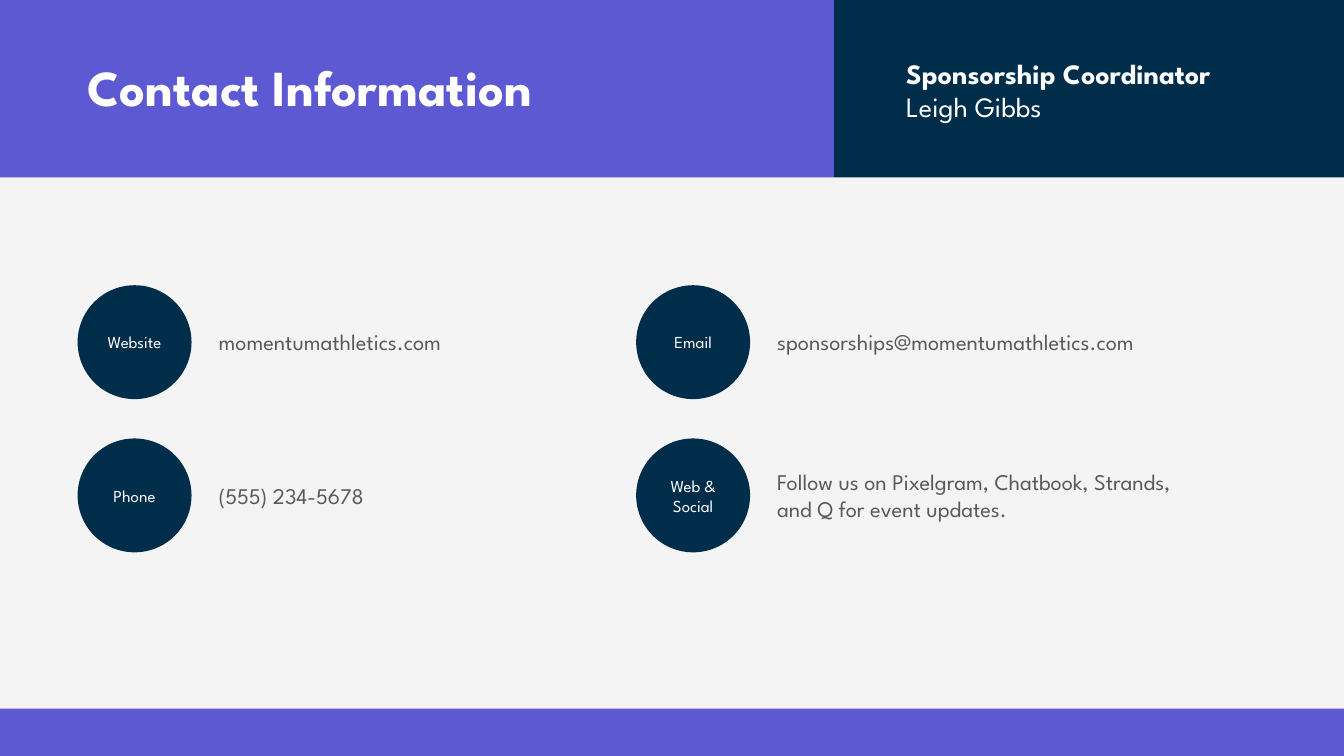
from dataclasses import dataclass

from pptx import Presentation
from pptx.dml.color import RGBColor
from pptx.enum.shapes import MSO_SHAPE
from pptx.enum.text import MSO_ANCHOR, MSO_AUTO_SIZE, PP_ALIGN
from pptx.shapes.autoshape import Shape
from pptx.slide import Slide
from pptx.text.text import TextFrame
from pptx.util import Inches, Pt

NAVY = RGBColor(0x00, 0x2D, 0x4A)
PURPLE = RGBColor(0x5C, 0x59, 0xD3)
LIGHT = RGBColor(0xF4, 0xF4, 0xF4)
GREY = RGBColor(0x59, 0x59, 0x59)
WHITE = RGBColor(0xFF, 0xFF, 0xFF)
FONT = "League Spartan"

# Contact grid
LEFT, TOP = 0.77, 2.83
COL_STEP, ROW_STEP = 5.54, 1.52
CIRCLE = 1.13
DETAIL_OFFSET = 1.3


@dataclass
class Box:
    left: float
    top: float
    width: float
    height: float

    def inches(self) -> tuple[Inches, ...]:
        return tuple(Inches(v) for v in (self.left, self.top, self.width, self.height))


@dataclass
class Contact:
    col: int
    row: int
    label: str
    detail: str
    width: float
    height: float = 0.37


CONTACTS = [
    Contact(0, 0, "Website", "momentumathletics.com", 3.38),
    Contact(1, 0, "Email", "sponsorships@momentumathletics.com", 5.16),
    Contact(0, 1, "Phone", "(555) 234-5678", 2.71),
    Contact(1, 1, "Web & Social",
            "Follow us on Pixelgram, Chatbook, Strands, and Q for event updates.",
            4.35, 0.64),
]


def write(tf: TextFrame, text: str, size: int, color: RGBColor, bold: bool = False) -> None:
    """Fill a frame with text; only the first paragraph can be bold."""
    tf.text = text
    tf.word_wrap = True
    for i, p in enumerate(tf.paragraphs):
        for r in p.runs:
            r.font.name = FONT
            r.font.size = Pt(size)
            r.font.bold = bold and i == 0
            r.font.color.rgb = color


def add_filled(s: Slide, kind: MSO_SHAPE, box: Box, color: RGBColor) -> Shape:
    sp = s.shapes.add_shape(kind, *box.inches())
    sp.shadow.inherit = False
    sp.fill.solid()
    sp.fill.fore_color.rgb = color
    sp.line.fill.background()
    return sp


def add_text(s: Slide, box: Box, text: str, size: int, color: RGBColor,
             bold: bool = False) -> None:
    tf = s.shapes.add_textbox(*box.inches()).text_frame
    write(tf, text, size, color, bold)
    tf.auto_size = MSO_AUTO_SIZE.SHAPE_TO_FIT_TEXT


def add_contact(s: Slide, c: Contact) -> None:
    left, top = LEFT + c.col * COL_STEP, TOP + c.row * ROW_STEP
    sp = add_filled(s, MSO_SHAPE.OVAL, Box(left, top, CIRCLE, CIRCLE), NAVY)
    tf = sp.text_frame
    write(tf, c.label, 12, WHITE)
    tf.margin_left = tf.margin_right = Inches(0.05)
    tf.vertical_anchor = MSO_ANCHOR.MIDDLE
    tf.paragraphs[0].alignment = PP_ALIGN.CENTER
    # Detail is centred on the circle's height
    detail_top = top + (CIRCLE - c.height) / 2
    add_text(s, Box(left + DETAIL_OFFSET, detail_top, c.width, c.height),
             c.detail, 16, GREY)


def main() -> None:
    prs = Presentation()
    prs.slide_width, prs.slide_height = Inches(13.33), Inches(7.5)
    s = prs.slides.add_slide(prs.slide_layouts[6])
    s.background.fill.solid()
    s.background.fill.fore_color.rgb = LIGHT

    # Header and footer bands
    add_filled(s, MSO_SHAPE.RECTANGLE, Box(8.27, 0, 5.06, 1.76), NAVY)
    add_filled(s, MSO_SHAPE.RECTANGLE, Box(0, 0, 8.27, 1.76), PURPLE)
    add_filled(s, MSO_SHAPE.RECTANGLE, Box(0, 7.03, 13.33, 0.47), PURPLE)

    # Header text
    add_text(s, Box(0.77, 0.51, 5.66, 0.71), "Contact Information", 36, WHITE, True)
    add_text(s, Box(8.89, 0.51, 3.94, 0.77),
             "Sponsorship Coordinator\nLeigh Gibbs", 20, WHITE, True)

    # Contact details
    for c in CONTACTS:
        add_contact(s, c)

    prs.save("out.pptx")


if __name__ == "__main__":
    main()
